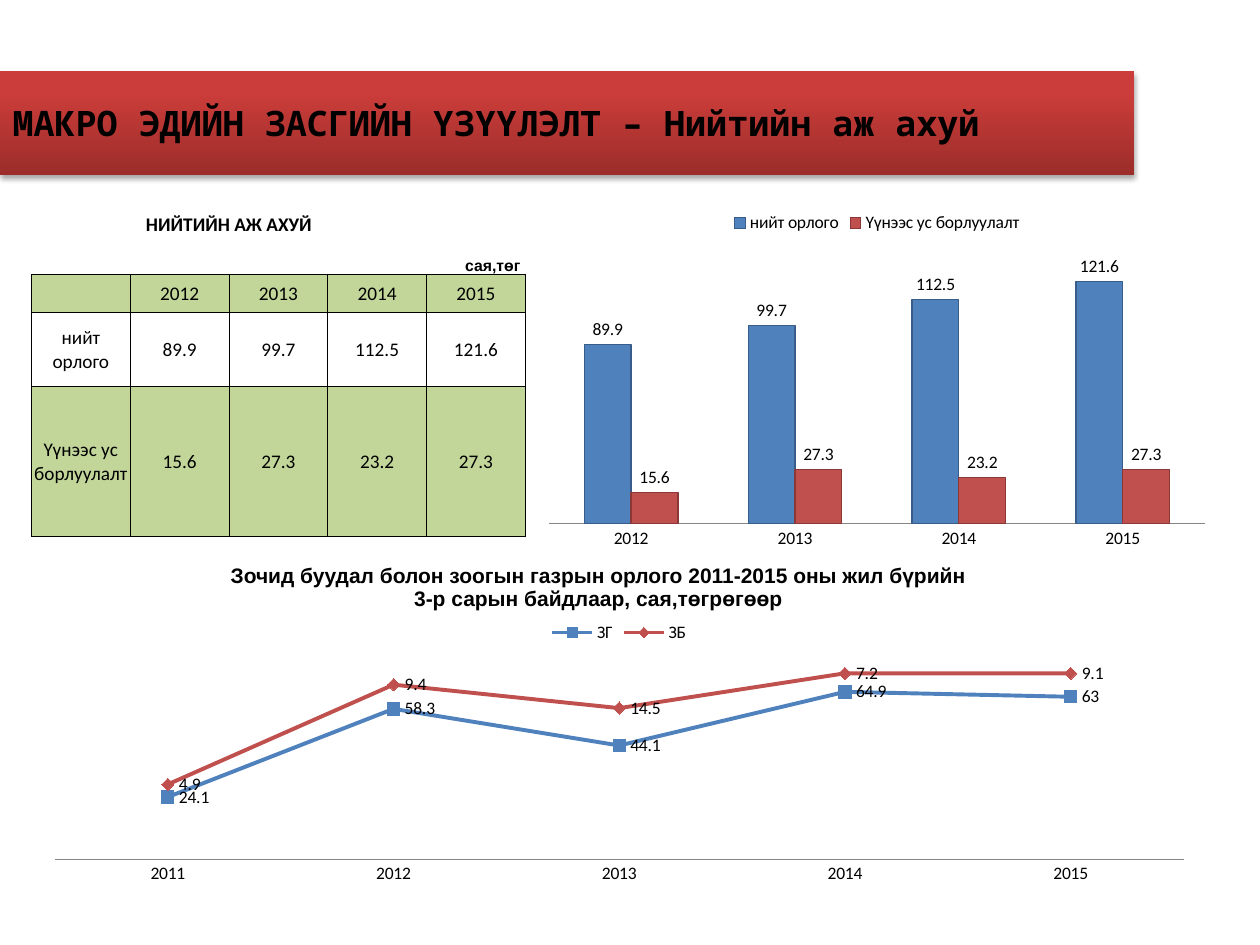
from lxml.etree import SubElement
from pptx import Presentation
from pptx.chart.data import CategoryChartData
from pptx.dml.color import RGBColor
from pptx.enum.chart import (XL_CHART_TYPE, XL_LABEL_POSITION, XL_LEGEND_POSITION,
                             XL_MARKER_STYLE, XL_TICK_LABEL_POSITION, XL_TICK_MARK)
from pptx.enum.text import MSO_ANCHOR, MSO_AUTO_SIZE, PP_ALIGN
from pptx.oxml import parse_xml
from pptx.oxml.ns import qn
from pptx.util import Inches, Pt

BLACK, GREEN, AXIS_GREY = "000000", "C2D69A", "868686"
BLUE, RED = "4F81BD", "C0504D"
OUTLINES = {BLUE: "385D8A", RED: "8C3836"}
PLAIN_STYLE = "{2D5ABB26-0587-4C30-8999-92F81FD0307C}"
YEARS = ["2011", "2012", "2013", "2014", "2015"]
INCOME = [
    ("нийт орлого", [89.9, 99.7, 112.5, 121.6], BLUE),
    ("Үүнээс ус борлуулалт", [15.6, 27.3, 23.2, 27.3], RED),
]
HOSPITALITY = [
    ("ЗГ", [24.1, 58.3, 44.1, 64.9, 63], BLUE),
    ("ЗБ", [4.9, 9.4, 14.5, 7.2, 9.1], RED),
]


def box(*lengths):
    return [Inches(length) for length in lengths]


def color(hex_code):
    return RGBColor.from_string(hex_code)


def set_font(font, size, name="Calibri", bold=False):
    font.size, font.name, font.bold = Pt(size), name, bold
    font.color.rgb = color(BLACK)


def add_title(slide, text):
    title = slide.shapes.title
    title.left, title.top, title.width, title.height = box(0, 0.56, 9, 0.83)
    title.fill.gradient()
    title.fill.gradient_angle = 270
    top, bottom = title.fill.gradient_stops
    top.position, bottom.position = 0.2, 1
    top.color.rgb, bottom.color.rgb = color("CB3D3A"), color("9B2D2A")
    effects = parse_xml(
        '<a:effectLst xmlns:a="http://schemas.openxmlformats.org/drawingml/2006/main">'
        '<a:outerShdw blurRad="40000" dist="23000" dir="5400000" rotWithShape="0">'
        '<a:srgbClr val="000000"><a:alpha val="35000"/></a:srgbClr>'
        '</a:outerShdw></a:effectLst>')
    title.element.spPr.append(effects)
    frame = title.text_frame
    frame.text = text
    frame.word_wrap = True
    frame.auto_size = MSO_AUTO_SIZE.NONE
    frame.vertical_anchor = MSO_ANCHOR.MIDDLE
    heading = frame.paragraphs[0]
    heading.alignment = PP_ALIGN.JUSTIFY
    set_font(heading.font, 20, "Noto Sans Mono", True)


def add_plain_table(slide, place, row_heights, column_count):
    """Add a table without banding, borders or fills."""
    table = slide.shapes.add_table(len(row_heights), column_count, *box(*place)).table
    table.first_row = table.horz_banding = False
    table._tbl.tblPr.find(qn("a:tableStyleId")).text = PLAIN_STYLE
    for row, height in zip(table.rows, row_heights):
        row.height = Inches(height)
    return table


def fill_cell(cell, text, size=11, name="Calibri", bold=False,
              align=PP_ALIGN.CENTER, anchor=MSO_ANCHOR.MIDDLE):
    cell.margin_left = cell.margin_right = cell.margin_top = cell.margin_bottom = 0
    cell.vertical_anchor = anchor
    cell.text = text
    for paragraph in cell.text_frame.paragraphs:
        paragraph.alignment = align
        set_font(paragraph.font, size, name, bold)


def add_borders(cell, sides):
    for side in sides:
        line = SubElement(cell._tc.get_or_add_tcPr(), qn(f"a:ln{side}"), w=str(Pt(0.5)))
        SubElement(SubElement(line, qn("a:solidFill")), qn("a:srgbClr"), val=BLACK)


def add_income_table(slide):
    table = add_plain_table(slide, (0.25, 1.58, 3.92, 2.67),
                            [0.3, 0.3, 0.3, 0.59, 1.19], 5)
    records = [["", *YEARS[1:]]]
    records += [[name, *map(str, values)] for name, values, _ in INCOME]
    for r, record in enumerate([[""] * 5, [""] * 5, *records]):
        for c, text in enumerate(record):
            cell = table.cell(r, c)
            fill_cell(cell, text)
            add_borders(cell, ["", "B", "LRTB", "LRTB", "LRTB"][r])
            if r in (2, 4):
                cell.fill.solid()
                cell.fill.fore_color.rgb = color(GREEN)
    table.cell(0, 0).merge(table.cell(0, 3))
    fill_cell(table.cell(0, 0), "НИЙТИЙН АЖ АХУЙ", bold=True, anchor=MSO_ANCHOR.BOTTOM)
    unit = table.cell(1, 4)
    fill_cell(unit, "сая,төг", 9, "Arial", True, PP_ALIGN.RIGHT, MSO_ANCHOR.BOTTOM)
    unit.margin_right = Inches(0.04)


def add_value_chart(slide, place, kind, years, records, label_position):
    """Add a chart with value labels, a legend on top and no value axis."""
    data = CategoryChartData()
    data.categories = years
    for name, values, _ in records:
        data.add_series(name, values)
    chart = slide.shapes.add_chart(kind, *box(*place), data).chart
    set_font(chart.font, 10)
    chart.has_title = False
    chart.has_legend = True
    chart.legend.position = XL_LEGEND_POSITION.TOP
    chart.legend.include_in_layout = False
    chart.value_axis.visible = False
    chart.value_axis.has_major_gridlines = False
    chart.value_axis.minimum_scale = 0
    axis = chart.category_axis
    axis.major_tick_mark = axis.minor_tick_mark = XL_TICK_MARK.NONE
    axis.tick_label_position = XL_TICK_LABEL_POSITION.NEXT_TO_AXIS
    axis.format.line.color.rgb = color(AXIS_GREY)
    plot = chart.plots[0]
    plot.vary_by_categories = False
    for series in plot.series:
        series.data_labels.show_value = True
        series.data_labels.position = label_position
    return plot


def add_income_chart(slide):
    plot = add_value_chart(slide, (4.25, 1.58, 5.42, 2.83), XL_CHART_TYPE.COLUMN_CLUSTERED,
                           YEARS[1:], INCOME, XL_LABEL_POSITION.OUTSIDE_END)
    plot.gap_width, plot.overlap = 150, 0
    for series, (_, _, tone) in zip(plot.series, INCOME):
        series.format.fill.solid()
        series.format.fill.fore_color.rgb = color(tone)
        series.format.line.color.rgb = color(OUTLINES[tone])
        series.format.line.width = Pt(0.75)


def add_hospitality_chart(slide):
    plot = add_value_chart(slide, (0.25, 4.83, 9.33, 2.23),
                           XL_CHART_TYPE.LINE_MARKERS_STACKED,
                           YEARS, HOSPITALITY, XL_LABEL_POSITION.RIGHT)
    markers = [XL_MARKER_STYLE.SQUARE, XL_MARKER_STYLE.DIAMOND]
    for series, (_, _, tone), marker in zip(plot.series, HOSPITALITY, markers):
        series.smooth = False
        series.format.line.color.rgb = color(tone)
        series.format.line.width = Pt(2.25)
        series.marker.style, series.marker.size = marker, 7
        series.marker.format.fill.solid()
        series.marker.format.fill.fore_color.rgb = color(tone)
        series.marker.format.line.color.rgb = color(tone)


def main():
    deck = Presentation()
    deck.slide_width, deck.slide_height = box(10, 7.5)
    slide = deck.slides.add_slide(deck.slide_layouts[5])
    add_title(slide, "МАКРО ЭДИЙН ЗАСГИЙН ҮЗҮҮЛЭЛТ – Нийтийн аж ахуй")
    caption = add_plain_table(slide, (0.5, 4.33, 8.5, 0.67), [0.67], 1)
    fill_cell(caption.cell(0, 0),
              "Зочид буудал болон зоогын газрын орлого 2011-2015 оны жил бүрийн\n"
              "3-р сарын байдлаар, сая,төгрөгөөр", 12, "Arial", True)
    add_income_table(slide)
    add_income_chart(slide)
    add_hospitality_chart(slide)
    deck.save("out.pptx")


if __name__ == "__main__":
    main()
